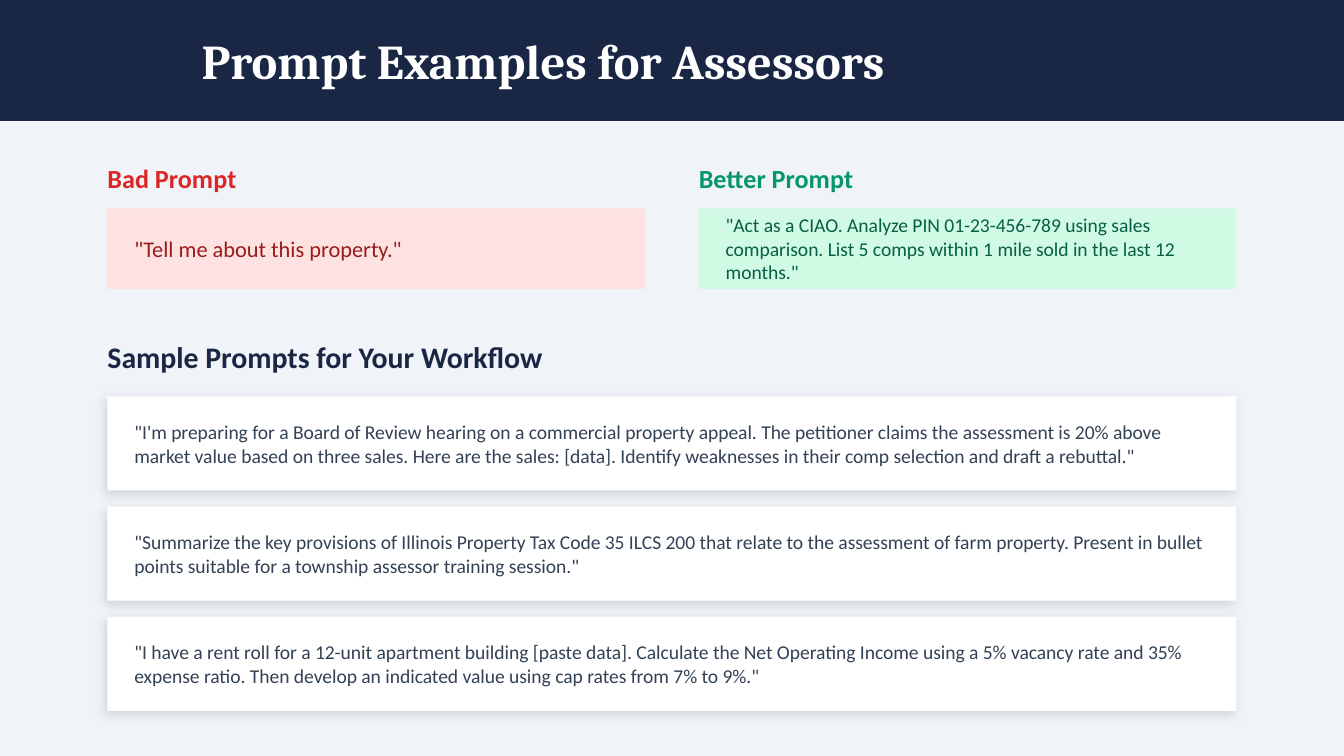
from pptx import Presentation
from pptx import util as u
from pptx.dml.color import RGBColor
from pptx.enum import shapes, text
from pptx.oxml import parse_xml
from pptx.oxml.ns import nsdecls

Pt = u.Pt
COLORS = {
    "background": "F0F4F8", "navy": "1A2744", "white": "FFFFFF", "slate": "334155",
    "bad_heading": "DC2626", "bad_fill": "FEE2E2", "bad_text": "991B1B",
    "better_heading": "059669", "better_fill": "D1FAE5", "better_text": "065F46",
    "shadow": "000000",
}
COMPARISONS = [
    ("bad", "Bad Prompt", '"Tell me about this property."', 12),
    ("better", "Better Prompt",
     '"Act as a CIAO. Analyze PIN 01-23-456-789 using sales comparison. '
     'List 5 comps within 1 mile sold in the last 12 months."', 10.5),
]
SAMPLES = [
    '"I\'m preparing for a Board of Review hearing on a commercial property appeal. '
    'The petitioner claims the assessment is 20% above market value based on three sales. '
    'Here are the sales: [data]. Identify weaknesses in their comp selection and draft a rebuttal."',
    '"Summarize the key provisions of Illinois Property Tax Code 35 ILCS 200 that relate to '
    'the assessment of farm property. Present in bullet points suitable for a township '
    'assessor training session."',
    '"I have a rent roll for a 12-unit apartment building [paste data]. Calculate the Net '
    'Operating Income using a 5% vacancy rate and 35% expense ratio. Then develop an '
    'indicated value using cap rates from 7% to 9%."',
]


def color(name):
    """Return the named palette colour."""
    return RGBColor.from_string(COLORS[name])


def write_text(shape, words, size, color_name, font="Calibri", bold=False):
    """Fill a shape with one left-aligned, vertically centred paragraph."""
    frame = shape.text_frame
    frame.word_wrap = True
    frame.auto_size = text.MSO_AUTO_SIZE.NONE
    frame.vertical_anchor = text.MSO_ANCHOR.MIDDLE
    frame.margin_left = frame.margin_top = frame.margin_right = frame.margin_bottom = 0
    paragraph = frame.paragraphs[0]
    paragraph.alignment = text.PP_ALIGN.LEFT
    run = paragraph.add_run()
    run.text = words
    run.font.name = font
    run.font.size = Pt(size)
    run.font.bold = bold
    run.font.color.rgb = color(color_name)


def add_text(slide, box, words, **formatting):
    """Add a text box at (left, top, width, height) in points."""
    write_text(slide.shapes.add_textbox(*map(Pt, box)), words, **formatting)


def add_panel(slide, box, fill, shadow=False):
    """Add a borderless rectangle, with a soft shadow if wanted."""
    panel = slide.shapes.add_shape(shapes.MSO_SHAPE.RECTANGLE, *map(Pt, box))
    panel.fill.solid()
    panel.fill.fore_color.rgb = color(fill)
    panel.line.fill.background()
    panel.shadow.inherit = False
    if shadow:
        panel.element.spPr.find(".//{*}effectLst").append(parse_xml(
            f'<a:outerShdw {nsdecls("a")} blurRad="{Pt(6)}" dist="{Pt(2)}" '
            f'dir="{135 * 60000}" algn="bl" rotWithShape="0">'
            f'<a:srgbClr val="{COLORS["shadow"]}"><a:alpha val="12000"/></a:srgbClr>'
            '</a:outerShdw>'))
    return panel


def add_header(slide, box, words):
    """Place the title placeholder on a full-width band."""
    left, top, width, height = box
    band = add_panel(slide, box, "navy")
    title = slide.shapes.title
    title.element.addprevious(band.element)
    title.left, title.top = Pt(left + 108), Pt(top)
    title.width, title.height = Pt(width - 144), Pt(height)
    write_text(title, words, size=26, color_name="white", font="Cambria", bold=True)


def add_comparison(slide, box, kind, heading, prompt, size):
    """Add a coloured heading above a tinted prompt panel."""
    left, top, width, height = box
    panel_top, panel_height = top + 28.8, height - 28.8
    add_text(slide, (left, top, width, 25.2), heading,
             size=14, color_name=f"{kind}_heading", bold=True)
    add_panel(slide, (left, panel_top, width, panel_height), f"{kind}_fill")
    add_text(slide, (left + 14.4, panel_top, width - 28.8, panel_height), prompt,
             size=size, color_name=f"{kind}_text")


def add_samples(slide, box, heading, prompts):
    """Add a section heading above evenly spaced prompt cards."""
    left, top, width, height = box
    first_top, gap = top + 36, 8.64
    card_height = (height - 36 + gap) / len(prompts) - gap
    add_text(slide, (left, top, width, 28.8), heading,
             size=16, color_name="navy", bold=True)
    for index, prompt in enumerate(prompts):
        card_top = first_top + index * (card_height + gap)
        add_panel(slide, (left, card_top, width, card_height), "white", shadow=True)
        add_text(slide, (left + 14.4, card_top + 3.6, width - 28.8, card_height - 7.2),
                 prompt, size=10.5, color_name="slate")


def main():
    """Build and save the slide."""
    presentation = Presentation()
    presentation.slide_width, presentation.slide_height = Pt(720), Pt(405)
    slide = presentation.slides.add_slide(presentation.slide_layouts[5])
    slide.background.fill.solid()
    slide.background.fill.fore_color.rgb = color("background")
    add_header(slide, (0, 0, 720, 64.8), "Prompt Examples for Assessors")
    for index, comparison in enumerate(COMPARISONS):
        add_comparison(slide, (57.6 + index * 316.8, 82.8, 288, 72), *comparison)
    add_samples(slide, (57.6, 176.4, 604.8, 204.48),
                "Sample Prompts for Your Workflow", SAMPLES)
    presentation.save("out.pptx")


if __name__ == "__main__":
    main()
